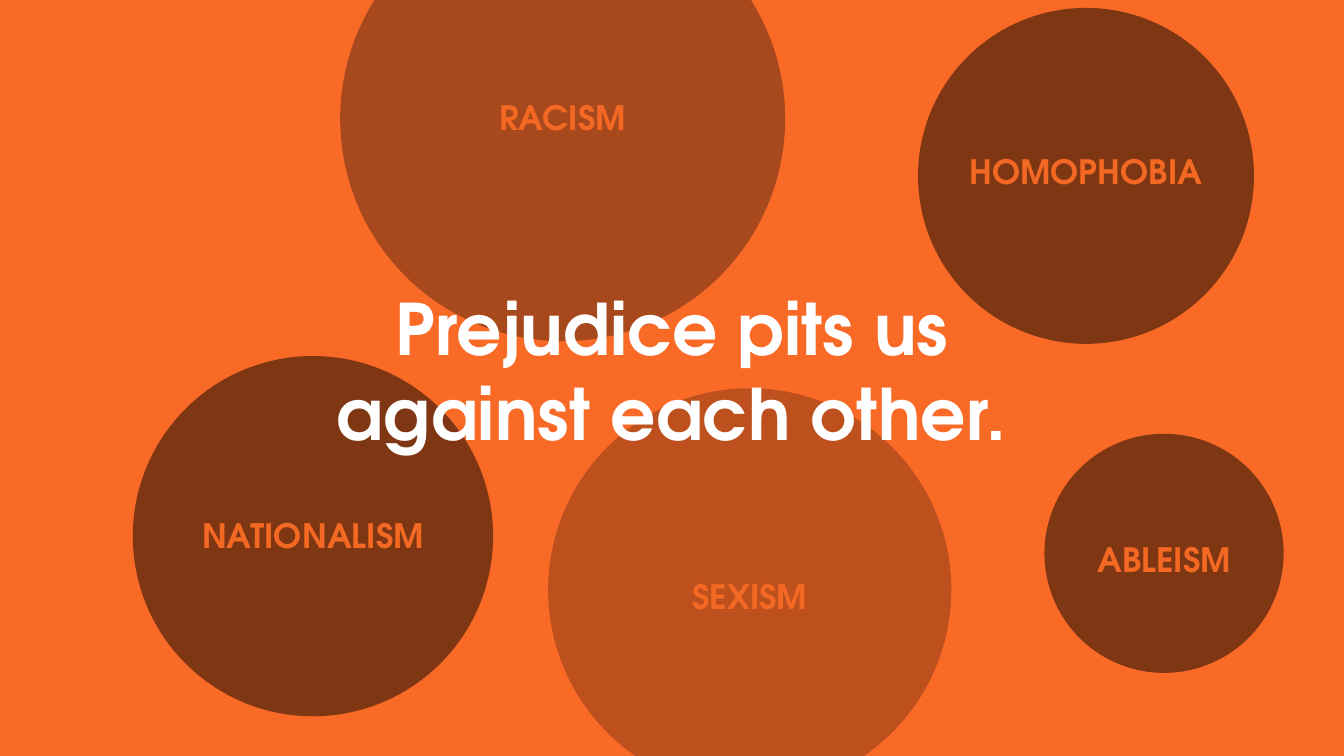
from lxml import etree
from pptx import Presentation, util as u
from pptx.dml.color import RGBColor
from pptx.enum import shapes, text
from pptx.oxml.ns import qn

FONT = "TeX Gyre Adventor"
ORANGE, LABEL, WHITE = "F96A27", "F36823", "FFFFFF"
WIDTH, HEIGHT = 25.4, 14.29
LABEL_HEIGHT = 1.02

# label, left, top, diameter, label top (cm), fill, opacity in percent
CIRCLES = [
    ("RACISM", 6.43, -1.96, 8.41, 1.7, "0C0C0C", 34),
    ("ABLEISM", 19.74, 8.2, 4.52, 10.06, "000000", 49),
    ("HOMOPHOBIA", 17.35, 0.15, 6.35, 2.72, "000000", 49),
    ("NATIONALISM", 2.51, 6.73, 6.81, 9.6, "000000", 49),
    ("SEXISM", 10.36, 7.34, 7.62, 10.77, "000000", 24),
]
MESSAGE = ["Prejudice pits us", "against each other."]


def paint(fill, color):
    fill.solid()
    fill.fore_color.rgb = RGBColor.from_string(color)


def add_circle(s, left, top, size, color, opacity):
    sp = s.shapes.add_shape(shapes.MSO_SHAPE.OVAL,
                            *map(u.Cm, (left, top, size, size)))
    sp.shadow.inherit = False
    sp.line.fill.background()
    paint(sp.fill, color)
    clr = sp.fill._xPr.find(qn("a:solidFill"))[0]
    etree.SubElement(clr, qn("a:alpha")).set("val", str(opacity * 1000))


def add_text(s, lines, box, size, color):
    tf = s.shapes.add_textbox(*map(u.Cm, box)).text_frame
    tf.word_wrap = True
    tf.text = "\n".join(lines)
    for p in tf.paragraphs:
        p.alignment = text.PP_ALIGN.CENTER
        for r in p.runs:
            r.font.name, r.font.size, r.font.bold = FONT, u.Pt(size), True
            r.font.color.rgb = RGBColor.from_string(color)
    return tf


prs = Presentation()
prs.slide_width, prs.slide_height = u.Cm(WIDTH), u.Cm(HEIGHT)
s = prs.slides.add_slide(prs.slide_layouts[6])
paint(s.background.fill, ORANGE)

# Labelled circles
for label, left, top, size, label_top, color, opacity in CIRCLES:
    add_circle(s, left, top, size, color, opacity)
    add_text(s, [label], (left, label_top, size, LABEL_HEIGHT), 18, LABEL)

# Message across the slide
tf = add_text(s, MESSAGE, (0, 5.31, WIDTH, 3.35), 38, WHITE)
tf.vertical_anchor = text.MSO_ANCHOR.MIDDLE
tf.margin_left = tf.margin_right = tf.margin_top = tf.margin_bottom = u.Cm(0.05)

prs.save("out.pptx")
